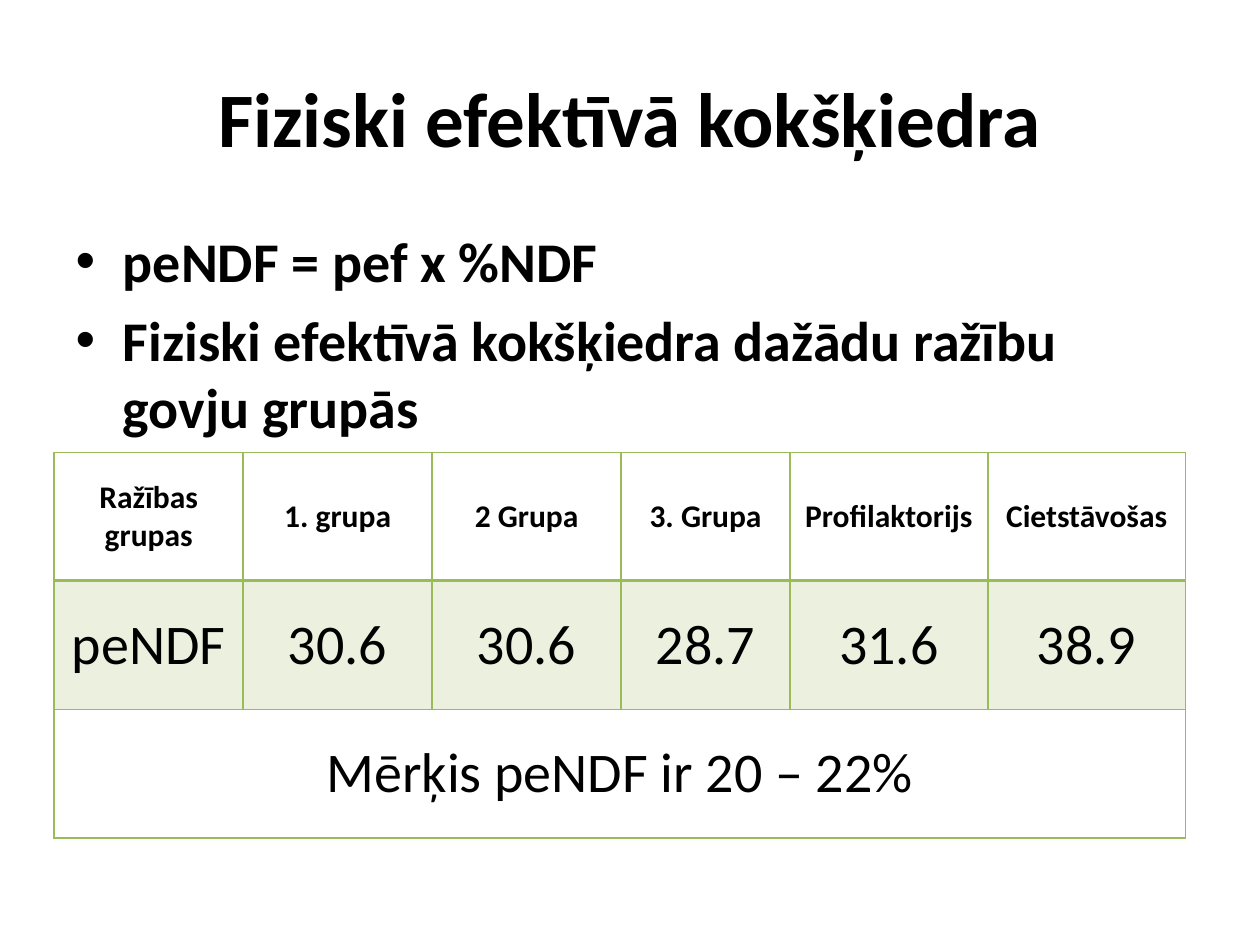
from dataclasses import dataclass

from lxml import etree
from pptx import Presentation
from pptx import util as u
from pptx.dml.color import RGBColor
from pptx.enum import text
from pptx.oxml import ns


@dataclass(frozen=True)
class Theme:
    font: str = "Calibri"
    ink: str = "000000"
    line: str = "9BBB59"
    band: str = "EBF1DE"
    title_size: int = 44
    body_size: int = 32
    header_size: int = 18
    thin: int = 1
    thick: int = 2


THEME = Theme()
HEADERS = ["Ražības grupas", "1. grupa", "2 Grupa", "3. Grupa",
           "Profilaktorijs", "Cietstāvošas"]
VALUES = ["peNDF", "30.6", "30.6", "28.7", "31.6", "38.9"]
TARGET = "Mērķis peNDF ir 20 – 22%"
COLUMN_WIDTHS = [1.5, 1.5, 1.5, 1.34, 1.57, 1.57]
ROW_HEIGHT = 1.02


def format_paragraph(paragraph, size, bold):
    values = {"name": THEME.font, "size": u.Pt(size), "bold": bold}
    for name, value in values.items():
        setattr(paragraph.font, name, value)
    paragraph.font.color.rgb = RGBColor.from_string(THEME.ink)


def place(shape, box):
    for name, value in zip(("left", "top", "width", "height"), box):
        setattr(shape, name, u.Inches(value))


def add_title(slide, box):
    title = slide.shapes.title
    place(title, box)
    frame = title.text_frame
    frame.text = "Fiziski efektīvā kokšķiedra"
    frame.vertical_anchor = text.MSO_ANCHOR.MIDDLE
    frame.paragraphs[0].alignment = text.PP_ALIGN.CENTER
    format_paragraph(frame.paragraphs[0], THEME.title_size, True)


def add_bullets(slide, box):
    body = slide.placeholders[1]
    place(body, box)
    frame = body.text_frame
    frame.text = ("peNDF = pef x %NDF\n"
                  "Fiziski efektīvā kokšķiedra dažādu ražību govju grupās")
    for paragraph in frame.paragraphs:
        format_paragraph(paragraph, THEME.body_size, True)
    frame.paragraphs[0].space_before = u.Pt(0)


def set_borders(cell, **widths):
    """Draw the cell's four sides; widths override the thin line by side."""
    properties = cell._tc.get_or_add_tcPr()
    for side in "LRTB":
        width = u.Pt(widths.get(side, THEME.thin))
        line = etree.SubElement(properties, ns.qn(f"a:ln{side}"), w=str(width))
        fill = etree.SubElement(line, ns.qn("a:solidFill"))
        etree.SubElement(fill, ns.qn("a:srgbClr"), val=THEME.line)


def fill_cell(cell, wording, size, bold):
    cell.text = wording
    cell.vertical_anchor = text.MSO_ANCHOR.MIDDLE
    paragraph = cell.text_frame.paragraphs[0]
    paragraph.alignment = text.PP_ALIGN.CENTER
    format_paragraph(paragraph, size, bold)


def add_group_table(slide, left, top):
    rows = [
        (HEADERS, THEME.header_size, True, None, {"B": THEME.thick}),
        (VALUES, THEME.body_size, False, THEME.band, {"T": THEME.thick}),
        ([TARGET] + [""] * (len(HEADERS) - 1), THEME.body_size, False, None, {}),
    ]
    box = (left, top, sum(COLUMN_WIDTHS), ROW_HEIGHT * len(rows))
    table = slide.shapes.add_table(
        len(rows), len(HEADERS), *map(u.Inches, box)).table
    for column, width in zip(table.columns, COLUMN_WIDTHS):
        column.width = u.Inches(width)
    for index, (wordings, size, bold, band, borders) in enumerate(rows):
        table.rows[index].height = u.Inches(ROW_HEIGHT)
        for cell, wording in zip(table.rows[index].cells, wordings):
            set_borders(cell, **borders)
            if band:
                cell.fill.solid()
                cell.fill.fore_color.rgb = RGBColor.from_string(band)
            else:
                cell.fill.background()
            fill_cell(cell, wording, size, bold)
    last = len(rows) - 1
    table.cell(last, 0).merge(table.cell(last, len(HEADERS) - 1))


def main():
    presentation = Presentation()
    presentation.slide_width = u.Inches(10)
    presentation.slide_height = u.Inches(7.5)
    slide = presentation.slides.add_slide(presentation.slide_layouts[1])
    add_title(slide, (0.5, 0.3, 9, 1.25))
    add_bullets(slide, (0.5, 1.75, 9, 4.95))
    add_group_table(slide, 0.43, 3.59)
    presentation.save("out.pptx")


if __name__ == "__main__":
    main()
